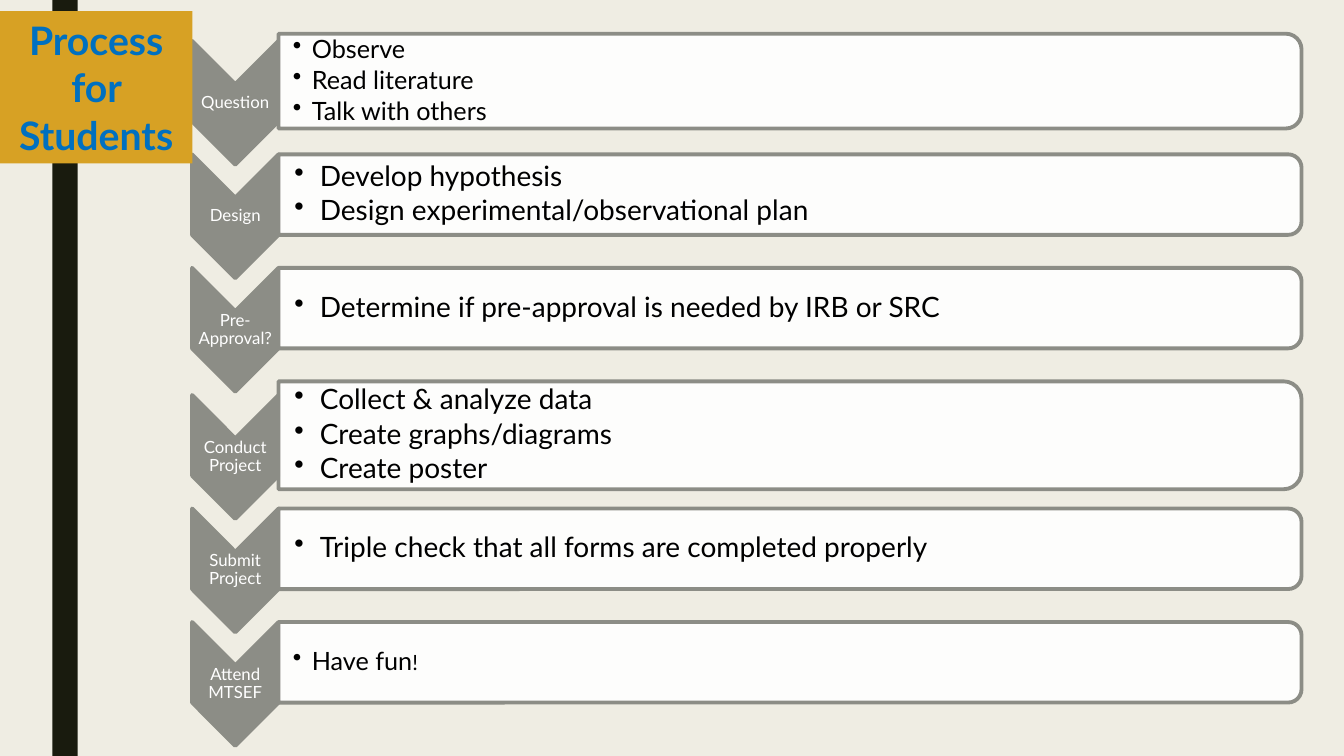
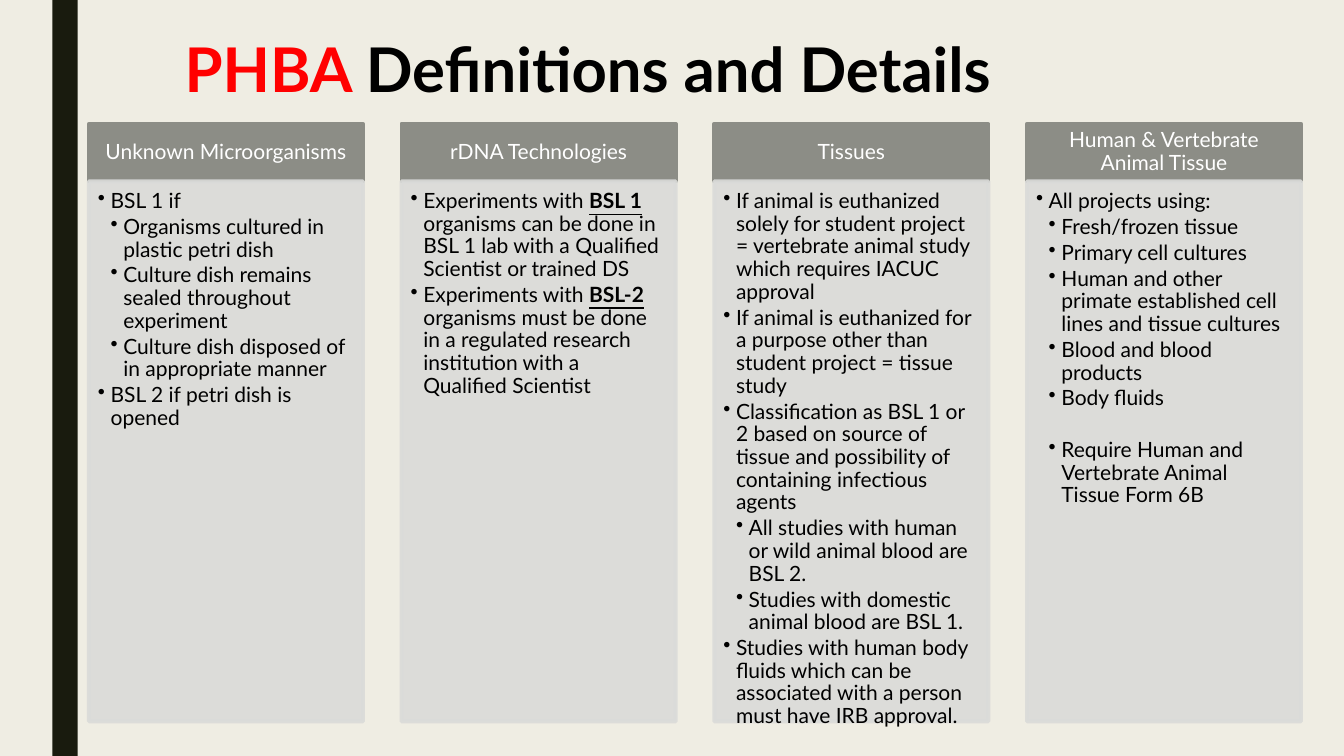
from dataclasses import dataclass

from lxml.etree import SubElement
from pptx import Presentation
from pptx.dml.color import RGBColor
from pptx.enum.shapes import MSO_SHAPE as Preset
from pptx.enum.text import MSO_ANCHOR as Anchor, MSO_AUTO_SIZE as AutoSize, PP_ALIGN as Align
from pptx.oxml.ns import qn
from pptx.util import Cm, Pt


@dataclass(frozen=True)
class Theme:
    font: str = "Lato"
    background: str = "EFEDE3"
    rail: str = "191B0E"
    gray: str = "8C8D86"
    panel: str = "DADBD9"
    white: str = "FFFFFF"
    black: str = "000000"
    gold: str = "D7A124"
    blue: str = "0070C0"
    red: str = "FF0000"
    outline: float = 2.75
    opacity: int = 90
    line_spacing: float = 0.9
    label_size: int = 12
    column_size: int = 15
    badge_size: int = 28
    title_size: int = 44


THEME = Theme()
KEY_TERM = {"bold": True, "underline": True}

# label, card height in cm, text size, bullets
STEPS = [
    ("Question", 2.39, 18, ["Observe", "Read literature", "Talk with others"]),
    ("Design", 2.03, 20, ["Develop hypothesis", "Design experimental/observational plan"]),
    ("Pre-Approval?", 2.03, 20, ["Determine if pre-approval is needed by IRB or SRC"]),
    ("Conduct Project", 2.72, 20,
     ["Collect & analyze data", "Create graphs/diagrams", "Create poster"]),
    ("Submit Project", 2.03, 20, ["Triple check that all forms are completed properly"]),
    ("Attend MTSEF", 2.03, 18, [[("Have fun", {}), ("!", {"size": 15})]]),
]

# heading, then (level, text or runs, optional space before in points)
COLUMNS = [
    ("Unknown Microorganisms", [
        (1, "BSL 1 if"),
        (2, "Organisms cultured in plastic petri dish"),
        (2, "Culture dish remains sealed throughout experiment"),
        (2, "Culture dish disposed of in appropriate manner"),
        (1, "BSL 2 if petri dish is opened"),
    ]),
    ("rDNA Technologies", [
        (1, [("Experiments with ", {}), ("BSL 1", KEY_TERM),
             (" organisms can be done in BSL 1 lab with a Qualified Scientist or trained DS", {})]),
        (1, [("Experiments with ", {}), ("BSL-2", KEY_TERM),
             (" organisms must be done in a regulated research institution"
              " with a Qualified Scientist", {})]),
    ]),
    ("Tissues", [
        (1, "If animal is euthanized solely for student project = vertebrate animal study"
            " which requires IACUC approval"),
        (1, "If animal is euthanized for a purpose other than student project = tissue study"),
        (1, "Classification as BSL 1 or 2 based on source of tissue and possibility of"
            " containing infectious agents"),
        (2, "All studies with human or wild animal blood are BSL 2."),
        (2, "Studies with domestic animal blood are BSL 1."),
        (1, "Studies with human body fluids which can be associated with a person"
            " must have IRB approval."),
    ]),
    ("Human & Vertebrate Animal Tissue", [
        (1, "All projects using:"),
        (2, "Fresh/frozen tissue"),
        (2, "Primary cell cultures"),
        (2, "Human and other primate established cell lines and tissue cultures"),
        (2, "Blood and blood products"),
        (2, "Body fluids"),
        (2, "Require Human and Vertebrate Animal Tissue Form 6B", 18.45),
    ]),
]


def rgb(value):
    return RGBColor.from_string(value)


def place(shape, left, top, width, height):
    shape.left, shape.top, shape.width, shape.height = map(Cm, (left, top, width, height))


def add_block(slide, preset, box, fill, line=None, see_through=()):
    """Add a flat shape; see_through lists the spPr paths of the fills to make translucent."""
    shape = slide.shapes.add_shape(preset, *map(Cm, box))
    shape.shadow.inherit = False
    shape.fill.solid()
    shape.fill.fore_color.rgb = rgb(fill)
    if line:
        shape.line.color.rgb = rgb(line)
        shape.line.width = Pt(THEME.outline)
    else:
        shape.line.fill.background()
    for route in see_through:
        color = shape.element.spPr.find("/".join(qn(tag) for tag in route))
        SubElement(color, qn("a:alpha"), val=str(THEME.opacity * 1000))
    return shape


FILL_COLOR = ("a:solidFill", "a:srgbClr")
LINE_COLOR = ("a:ln", *FILL_COLOR)


def prepare_frame(frame, margins, anchor):
    frame.word_wrap = True
    frame.auto_size = AutoSize.NONE
    frame.vertical_anchor = anchor
    (frame.margin_left, frame.margin_top,
     frame.margin_right, frame.margin_bottom) = map(Cm, margins)


def add_runs(paragraph, runs, size, color, bold=False):
    if isinstance(runs, str):
        runs = [(runs, {})]
    for text, style in runs:
        run = paragraph.add_run()
        run.text = text
        font = run.font
        font.name = THEME.font
        font.size = Pt(style.get("size", size))
        font.bold = style.get("bold", bold)
        font.underline = style.get("underline", False)
        font.color.rgb = rgb(style.get("color", color))


def write_label(frame, text, size, margins):
    prepare_frame(frame, margins, Anchor.MIDDLE)
    paragraph = frame.paragraphs[0]
    paragraph.alignment = Align.CENTER
    paragraph.line_spacing = THEME.line_spacing
    paragraph.space_after = Pt(size * 0.35)
    add_runs(paragraph, text, size, THEME.white)


def write_bullets(frame, items, size, indent, margins, anchor):
    prepare_frame(frame, margins, anchor)
    for index, (level, runs, *gap) in enumerate(items):
        paragraph = frame.add_paragraph() if index else frame.paragraphs[0]
        paragraph.alignment = Align.LEFT
        paragraph.level = level
        paragraph.line_spacing = THEME.line_spacing
        paragraph.space_before = Pt(gap[0] if gap else 0)
        paragraph.space_after = Pt(size * 0.15)
        properties = paragraph._p.get_or_add_pPr()
        properties.set("marL", str(Cm(indent * level)))
        properties.set("indent", str(-Cm(indent)))
        SubElement(properties, qn("a:buChar"), char="•")
        add_runs(paragraph, runs, size, THEME.black)


def write_title(slide, box, runs, size, color, align):
    title = slide.shapes.title
    place(title, *box)
    prepare_frame(title.text_frame, (0.25, 0.13, 0.25, 0.13), Anchor.MIDDLE)
    paragraph = title.text_frame.paragraphs[0]
    paragraph.alignment = align
    add_runs(paragraph, runs, size, color, bold=True)
    return title


def style_master(presentation, slide):
    """Give the master its background and the dark rail, which is drawn on slide first."""
    master = presentation.slide_master
    master.background.fill.solid()
    master.background.fill.fore_color.rgb = rgb(THEME.background)
    rail = add_block(slide, Preset.RECTANGLE, (1.32, 0, 0.64, 19.05), THEME.rail)
    rail.element.nvSpPr.cNvPr.set("id", "99")
    master.shapes.element.insert(2, rail.element)


def add_turned(slide, preset, box, *paint):
    """Add a shape turned by 90° that covers box once it is turned."""
    left, top, width, height = box
    frame = (left + (width - height) / 2, top + (height - width) / 2, height, width)
    shape = add_block(slide, preset, frame, *paint)
    shape.rotation = 90


def add_text_box(slide, box):
    return slide.shapes.add_textbox(*map(Cm, box)).text_frame


def build_process(slide):
    chevron_left, chevron_width, chevron_height = 4.84, 2.18, 3.12
    card_left, card_width, base_height = 7.02, 25.78, 2.03
    pitch, top = 2.86, 0.85
    thin = 0.03
    for label, card_height, size, bullets in STEPS:
        chevron_top = top + (card_height - base_height) / 2
        add_turned(slide, Preset.CHEVRON,
                   (chevron_left, chevron_top, chevron_width, chevron_height),
                   THEME.gray, THEME.gray)
        write_label(add_text_box(slide, (chevron_left, chevron_top + chevron_width / 2,
                                         chevron_width, chevron_height - chevron_width)),
                    label, THEME.label_size, (thin,) * 4)
        card = (card_left, top, card_width, card_height)
        add_turned(slide, Preset.ROUND_2_SAME_RECTANGLE, card,
                   THEME.white, THEME.gray, [FILL_COLOR])
        large = size == 20
        write_bullets(add_text_box(slide, card), [(1, text) for text in bullets], size,
                      0.64 if large else 0.48, (0.4 if large else 0.36, thin, thin, thin),
                      Anchor.MIDDLE)
        top = chevron_top + pitch

    badge = write_title(slide, (0, 0.28, 4.85, 3.84), "Process for Students",
                        THEME.badge_size, THEME.blue, Align.CENTER)
    badge.fill.solid()
    badge.fill.fore_color.rgb = rgb(THEME.gold)
    slide.shapes.element.append(badge.element)  # bring to front


def build_definitions(slide):
    write_title(slide, (4.4, 0.64, 25.6, 2.13),
                [("PHBA ", {"color": THEME.red}), ("Definitions and Details", {})],
                THEME.title_size, THEME.black, Align.LEFT)
    first_left, pitch, width = 2.24, 7.88, 6.91
    header_top, header_height, panel_height = 3.12, 1.45, 13.61
    for index, (heading, items) in enumerate(COLUMNS):
        left = first_left + index * pitch
        header = add_block(slide, Preset.RECTANGLE, (left, header_top, width, header_height),
                           THEME.gray, THEME.gray)
        write_label(header.text_frame, heading, THEME.column_size, (0.3, 0.18, 0.3, 0.18))
        panel = add_block(slide, Preset.RECTANGLE,
                          (left, header_top + header_height, width, panel_height),
                          THEME.panel, THEME.panel, [FILL_COLOR, LINE_COLOR])
        write_bullets(panel.text_frame, items, THEME.column_size, 0.32,
                      (0.23, 0.23, 0.3, 0.33), Anchor.TOP)


def main():
    presentation = Presentation()
    presentation.slide_width, presentation.slide_height = Cm(33.87), Cm(19.05)
    title_only = presentation.slide_layouts[5]
    process, definitions = (presentation.slides.add_slide(title_only) for _ in range(2))
    style_master(presentation, process)
    build_process(process)
    build_definitions(definitions)
    presentation.save("out.pptx")


if __name__ == "__main__":
    main()
